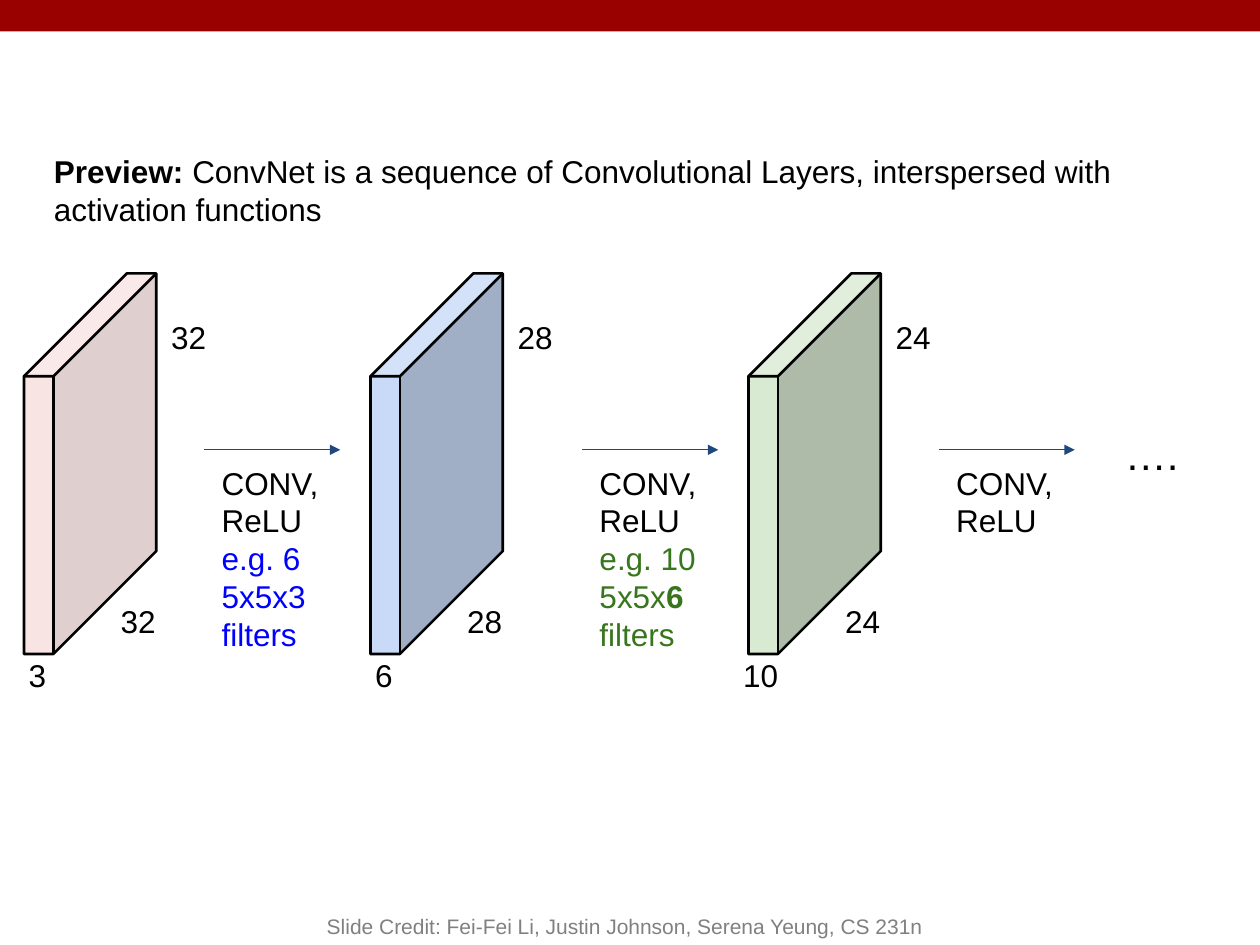
from lxml import etree
from pptx import Presentation
from pptx.dml.color import RGBColor
from pptx.enum import shapes, text
from pptx.oxml.ns import qn
from pptx.util import Inches, Pt

INK = "000000"


def color(value):
    return RGBColor.from_string(value)


def paint(shape, fill, line=None, alpha=None):
    shape.shadow.inherit = False
    shape.fill.solid()
    shape.fill.fore_color.rgb = color(fill)
    if alpha:
        tone = shape.fill._xPr.find(qn("a:solidFill"))[0]
        etree.SubElement(tone, qn("a:alpha"), val=str(alpha * 1000))
    if line:
        shape.line.color.rgb = color(line)
        shape.line.width = Pt(1.5)
    else:
        shape.line.fill.background()


def write(slide, box, lines, size=18, inset=0.1, **layout):
    frame = slide.shapes.add_textbox(*map(Inches, box)).text_frame
    style = {"word_wrap": True, "auto_size": text.MSO_AUTO_SIZE.NONE}
    for side in ("left", "right", "top", "bottom"):
        style["margin_" + side] = Inches(inset)
    align = layout.pop("align", text.PP_ALIGN.LEFT)
    for name, value in (style | layout).items():
        setattr(frame, name, value)
    for row, runs in enumerate(lines):
        para = frame.add_paragraph() if row else frame.paragraphs[0]
        para.alignment = align
        for words, tint, bold in runs:
            run = para.add_run()
            run.text = words
            looks = {"name": "Arial", "size": Pt(size), "bold": bold}
            for name, value in looks.items():
                setattr(run.font, name, value)
            run.font.color.rgb = color(tint)


def plain(words, tint=INK):
    return [(words, tint, False)]


def volume(slide, box, fill, side, depth, shift=-0.06, alpha=None):
    left, top, wide, high = box
    cube = slide.shapes.add_shape(shapes.MSO_SHAPE.CUBE, *map(Inches, box))
    cube.adjustments[0] = 0.777
    paint(cube, fill, INK, alpha)
    labels = [
        (side, 0.67, 2.51, 0.34),
        (side, 1.07, 0.25, 0.31),
        (depth, shift, 2.94, 0.2),
    ]
    for words, right, down, tall in labels:
        write(slide, (left + right, top + down, 0.54, tall), [plain(words)])


def step(slide, box, detail=()):
    left, top, wide, high = box
    arrow = slide.shapes.add_connector(
        shapes.MSO_CONNECTOR.STRAIGHT,
        Inches(left), Inches(top), Inches(left + 1.08), Inches(top),
    )
    arrow.line.color.rgb = color("1F497D")
    arrow.line.width = Pt(0.75)
    etree.SubElement(arrow.line._get_or_add_ln(), qn("a:tailEnd"), type="triangle")
    etree.SubElement(arrow._element.spPr, qn("a:effectLst"))
    lines = [plain("CONV,"), plain("ReLU")]
    if detail:
        lines.append(detail)
    write(slide, (left + 0.04, top + 0.01, wide, high), lines)


def header(slide, box):
    bar = slide.shapes.add_shape(shapes.MSO_SHAPE.RECTANGLE, *map(Inches, box))
    paint(bar, "990000")


def intro(slide, box):
    write(slide, box, [[
        ("Preview: ", INK, True),
        ("ConvNet is a sequence of Convolutional Layers, "
         "interspersed with activation functions", INK, False),
    ]])


def network(slide, box):
    left, top, wide, high = box
    stages = [
        (0, "F4CCCC", "32", "3", -0.06, 52),
        (2.75, "C9DAF8", "28", "6", -0.06, None),
        (5.75, "D9EAD3", "24", "10", -0.14, None),
    ]
    for right, fill, side, depth, shift, alpha in stages:
        volume(slide, (left + right, top, 1.05, high), fill, side, depth, shift, alpha)
    green = "38761D"
    steps = [
        (1.43, 1.08, plain("e.g. 6 5x5x3 filters", "0000FF")),
        (4.43, 1.16, [("e.g. 10 5x5x", green, False), ("6 ", green, True),
                      ("filters", green, False)]),
        (7.26, 1.08, ()),
    ]
    for right, span, detail in steps:
        step(slide, (left + right, top + 1.4, span, 0.43), detail)
    write(slide, (left + 8.64, top + 1.13, 1.05, 0.39), [plain("….")], 24)


def footer(slide, box):
    credit = "Slide Credit: Fei-Fei Li, Justin Johnson, Serena Yeung, CS 231n"
    write(slide, box, [plain(credit, "808080")], 12, 0.05,
          align=text.PP_ALIGN.CENTER, vertical_anchor=text.MSO_ANCHOR.BOTTOM)


def main():
    deck = Presentation()
    deck.slide_width, deck.slide_height = Inches(10), Inches(7.5)
    slide = deck.slides.add_slide(deck.slide_layouts[6])
    header(slide, (0, 0, 10, 0.25))
    intro(slide, (0.33, 1.11, 9.35, 1.08))
    network(slide, (0.19, 2.17, 9.69, 3.02))
    footer(slide, (2, 7, 5.92, 0.5))
    deck.save("out.pptx")


if __name__ == "__main__":
    main()
